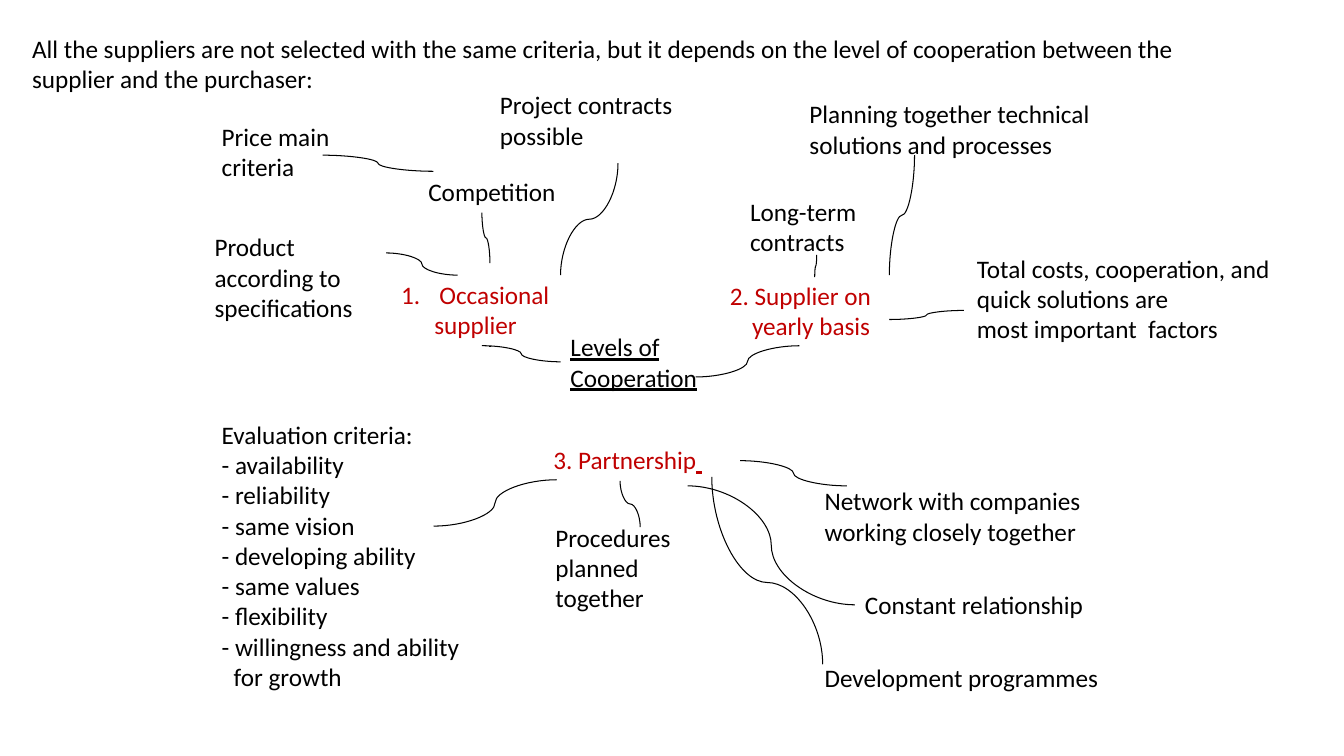
from dataclasses import dataclass

from lxml.etree import SubElement
from pptx import Presentation
from pptx.dml.color import RGBColor
from pptx.enum.shapes import MSO_CONNECTOR as CONN
from pptx.enum.text import MSO_AUTO_SIZE as AUTO
from pptx.oxml.ns import qn
from pptx.util import Emu, Pt

PX = 9144


@dataclass(frozen=True)
class Theme:
    font: str = "Calibri"
    size: Pt = Pt(18)
    line: Pt = Pt(0.75)
    ink: RGBColor = RGBColor(0, 0, 0)
    level: RGBColor = RGBColor(0xC0, 0, 0)


class MindMap:
    def __init__(self, slide, theme):
        self.slide, self.theme = slide, theme

    def run(self, r, **extra):
        t = self.theme
        fmt = {"name": t.font, "size": t.size, **extra}
        color = fmt.pop("color", t.ink)
        for key, value in fmt.items():
            setattr(r.font, key, value)
        r.font.color.rgb = color

    def text(self, box, *lines, wrap=True, **fmt):
        sp = self.slide.shapes.add_textbox(*(Emu(v * PX) for v in box))
        tf = sp.text_frame
        for key, value in {"word_wrap": wrap, "auto_size": AUTO.SHAPE_TO_FIT_TEXT}.items():
            setattr(tf, key, value)
        for i, line in enumerate(lines):
            words, indent = line if isinstance(line, tuple) else (line, 0)
            p = tf.paragraphs[0] if i == 0 else tf.add_paragraph()
            p.text = words
            if indent:
                p._p.get_or_add_pPr().set("marL", str(indent * PX))
            for r in p.runs:
                self.run(r, **fmt)
        return tf

    def number(self, p, hang):
        pPr = p._p.get_or_add_pPr()
        pPr.set("indent", str(-hang * PX))
        SubElement(pPr, qn("a:buFont"), typeface="+mj-lt")
        SubElement(pPr, qn("a:buAutoNum"), type="arabicPeriod")

    def link(self, x1, y1, x2, y2, kind=CONN.CURVE):
        ends = (Emu(round(v * PX)) for v in (x1, y1, x2, y2))
        cx = self.slide.shapes.add_connector(kind, *ends)
        cx.line.color.rgb = self.theme.ink
        cx.line.width = self.theme.line
        SubElement(cx._element.spPr, qn("a:effectLst"))
        return cx

    def drop(self, x1, y1, x2, y2, bend=None):
        mx, my = (x1 + x2) / 2, (y1 + y2) / 2
        dx, dy = (x2 - x1) / 2, (y2 - y1) / 2
        cx = self.link(mx - dy, my + dx, mx + dy, my - dx)
        spPr = cx._element.spPr
        spPr.find(qn("a:xfrm")).set("rot", "5400000")
        if bend:
            guides = spPr.find(qn("a:prstGeom")).find(qn("a:avLst"))
            SubElement(guides, qn("a:gd"), name="adj1", fmla=f"val {bend}")


def main():
    prs = Presentation()
    prs.slide_width, prs.slide_height = Emu(1333 * PX), Emu(750 * PX)
    theme = Theme()
    m = MindMap(prs.slides.add_slide(prs.slide_layouts[6]), theme)

    m.text((22, 28, 1189, 71),
           "All the suppliers are not selected with the same criteria, but it depends on "
           "the level of cooperation between the supplier and the purchaser:")
    m.text((556, 324, 201, 71), "Levels of", "Cooperation", underline=True)

    occasional = m.text((388, 272, 252, 71), ("Occasional", 38), ("supplier", 33),
                        color=theme.level)
    m.number(occasional.paragraphs[0], 38)
    m.text((714, 273, 282, 71), "2. Supplier on", ("yearly basis", 22), color=theme.level)
    partnership = m.text((539, 436, 236, 40), "3. Partnership", color=theme.level)
    r = partnership.paragraphs[0].add_run()
    r.text = " "
    m.run(r, color=theme.level, underline=True)

    wrapped = [
        ((203, 225, 184, 131), "Product according to specifications"),
        ((793, 93, 331, 71), "Planning together technical", "solutions and processes"),
        ((959, 246, 341, 101), "Total costs, cooperation, and quick solutions are",
         "most important  factors"),
        ((808, 652, 299, 40), "Development programmes"),
    ]
    unwrapped = [
        ((415, 170, 154, 40), "Competition"),
        ((210, 115, 128, 71), "Price main\ncriteria"),
        ((486, 84, 193, 71), "Project contracts", "possible"),
        ((734, 190, 131, 71), "Long-term", "contracts"),
        ((808, 477, 281, 71), "Network with companies\nworking closely together"),
        ((848, 580, 239, 40), "Constant relationship"),
        ((541, 513, 136, 101), "Procedures", "planned", "together"),
        ((210, 411, 264, 283), "Evaluation criteria:", "- availability", "- reliability",
         "- same vision", "- developing ability", "- same values", "- flexibility",
         "- willingness and ability", ("for growth", 12)),
    ]
    for wrap, notes in ((True, wrapped), (False, unwrapped)):
        for note in notes:
            m.text(*note, wrap=wrap)

    m.link(486, 343, 486, 344, CONN.STRAIGHT)
    for ends in [
        (478, 343, 556, 359), (793, 343, 690, 374), (454, 273, 383, 251),
        (430, 170, 320, 154), (882, 317, 956, 308), (682, 482, 848, 600),
        (552, 476, 430, 522), (734, 457, 840, 482),
    ]:
        m.link(*ends)
    for ends in [
        (486, 261, 478, 211), (556, 273, 613, 162), (882, 273, 907, 154),
        (808, 275, 810, 253), (615, 477, 635, 523), (706, 473, 816, 659, 56400),
    ]:
        m.drop(*ends)

    prs.save("out.pptx")


if __name__ == "__main__":
    main()
